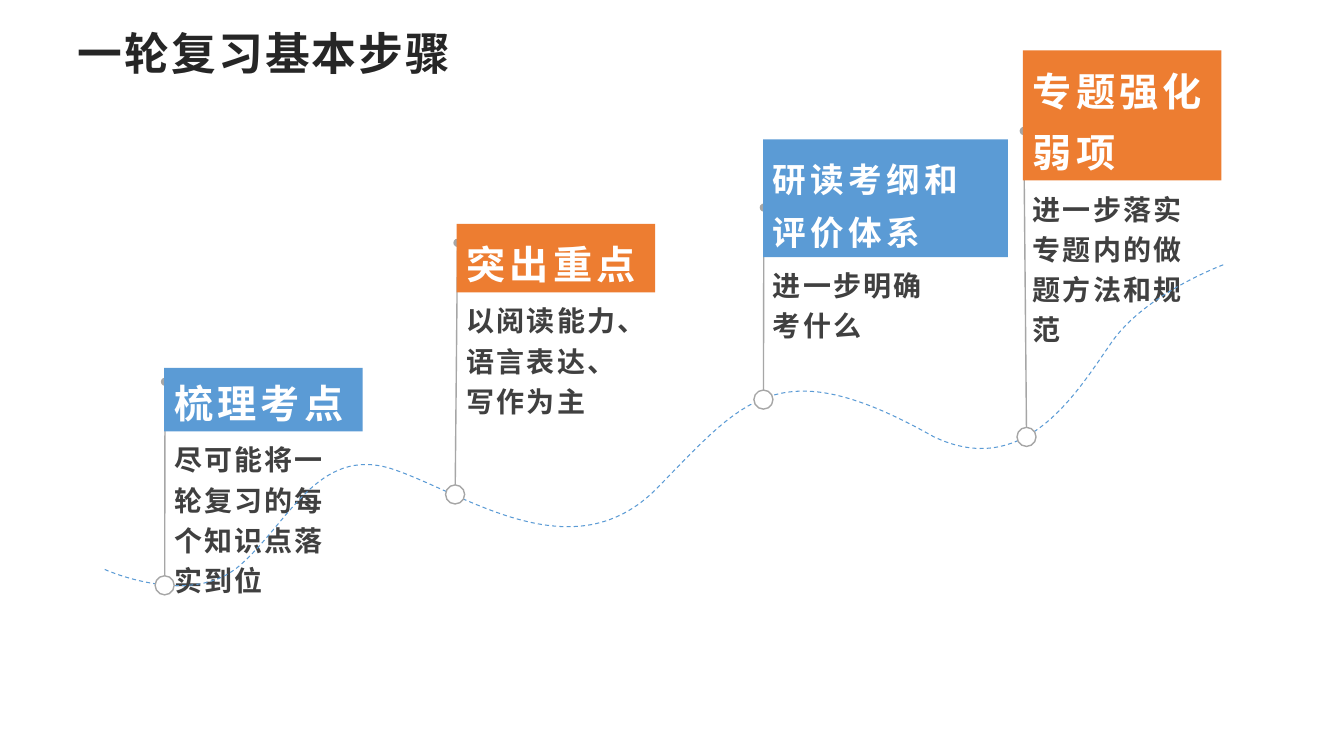
import pptx
import pptx.util
import pptx.dml.color
import pptx.enum.dml
import pptx.enum.shapes
import pptx.enum.text
import pptx.oxml
import pptx.oxml.ns
from pptx.util import Cm, Pt

COLORS = {
    "title": "262626",
    "body": "404040",
    "white": "FFFFFF",
    "blue": "5B9BD5",
    "orange": "ED7D31",
    "gray": "A6A6A6",
}
CJK_FONT = "Noto Sans CJK SC"
NS = 'xmlns:a="http://schemas.openxmlformats.org/drawingml/2006/main"'


def rgb(name):
    return pptx.dml.color.RGBColor.from_string(COLORS[name])


def write(shape, text, font, size, color, spacing, line_spacing, anchor, top=0.13):
    frame = shape.text_frame
    frame.word_wrap = True
    frame.vertical_anchor = anchor
    frame.margin_left = frame.margin_right = Cm(0.25)
    frame.margin_top, frame.margin_bottom = Cm(top), Cm(0.13)
    paragraph = frame.paragraphs[0]
    paragraph.alignment = pptx.enum.text.PP_ALIGN.LEFT
    paragraph.line_spacing = line_spacing
    run = paragraph.add_run()
    run.text = text
    run.font.name = font
    run.font.size = Pt(size)
    run.font.bold = True
    run.font.color.rgb = rgb(color)
    properties = run.font._element
    properties.set("lang", "zh-CN")
    properties.set("spc", str(int(spacing * 100)))
    properties.find(pptx.oxml.ns.qn("a:latin")).addnext(
        pptx.oxml.parse_xml(f'<a:ea {NS} typeface="{CJK_FONT}"/>'))


prs = pptx.Presentation()
prs.slide_width, prs.slide_height = Cm(33.87), Cm(19.05)
slide = prs.slides.add_slide(prs.slide_layouts[6])
shapes = slide.shapes
TOP = pptx.enum.text.MSO_ANCHOR.TOP
BOTTOM = pptx.enum.text.MSO_ANCHOR.BOTTOM

# Title
title = shapes.add_textbox(Cm(1.7), Cm(0.43), Cm(30.48), Cm(1.7))
write(title, "一轮复习基本步骤", "Arial", 32, "title", 1.5, 1.0, BOTTOM)

# Steps: heading, size, colour, left, top, width, height, marker centre, description
steps = [
    ("梳理考点", 28, "blue", 4.14, 9.27, 5.0, 1.6, (4.15, 14.75),
     "尽可能将一轮复习的每个知识点落实到位"),
    ("突出重点", 28, "orange", 11.51, 5.64, 5.0, 1.73, (11.47, 12.46),
     "以阅读能力、语言表达、写作为主"),
    ("研读考纲和评价体系", 24, "blue", 19.23, 3.51, 6.17, 2.97, (19.24, 10.07),
     "进一步明确考什么"),
    ("专题强化弱项", 28, "orange", 25.78, 1.27, 5.0, 3.28, (25.87, 11.01),
     "进一步落实专题内的做题方法和规范"),
]
for heading, size, color, left, top, width, height, marker, description in steps:
    detail_top = top + height + 0.12

    # Flagpole with a round head
    pole = shapes.add_connector(
        pptx.enum.shapes.MSO_CONNECTOR.STRAIGHT,
        Cm(marker[0]), Cm(marker[1]), Cm(left + 0.02), Cm(detail_top - 1.37))
    pole.line.color.rgb = rgb("gray")
    pole.line.width = Pt(1)
    pole.line._get_or_add_ln().append(
        pptx.oxml.parse_xml(f'<a:tailEnd {NS} type="oval"/>'))
    pole._element.spPr.append(pptx.oxml.parse_xml(f"<a:effectLst {NS}/>"))

    detail = shapes.add_textbox(Cm(left), Cm(detail_top), Cm(5), Cm(2.69))
    write(detail, description, "Arial", 20, "body", 1.5, 1.2, TOP, top=0)

    flag = shapes.add_shape(
        pptx.enum.shapes.MSO_SHAPE.RECTANGLE, Cm(left), Cm(top), Cm(width), Cm(height))
    flag.shadow.inherit = False
    flag.fill.solid()
    flag.fill.fore_color.rgb = rgb(color)
    flag.line.fill.background()
    write(flag, heading, CJK_FONT, size, "white", 3, 1.3, BOTTOM)

# Dashed route: a start point, then three points for each Bezier segment
route_points = [
    (2.64, 14.35),
    (2.64, 14.35), (4.78, 15.32), (6.02, 14.27),
    (7.26, 13.21), (8.0, 11.23), (9.86, 11.81),
    (11.68, 12.4), (14.45, 14.5), (16.59, 12.27),
    (18.75, 10.06), (19.63, 8.81), (23.52, 11.0),
    (25.78, 12.09), (27.08, 9.98), (27.97, 8.69),
    (28.83, 7.39), (30.89, 6.65), (30.89, 6.65),
]
points = [(Cm(x), Cm(y)) for x, y in route_points]
builder = shapes.build_freeform(*points[0], scale=1.0)
builder.add_line_segments(points[1:], close=False)
route = builder.convert_to_shape()
outline = route._element.find(".//" + pptx.oxml.ns.qn("a:path"))
segments = outline.findall(pptx.oxml.ns.qn("a:lnTo"))
for first in range(0, len(segments), 3):
    curve = pptx.oxml.parse_xml(f"<a:cubicBezTo {NS}/>")
    outline.append(curve)
    for segment in segments[first:first + 3]:
        curve.append(segment[0])
        outline.remove(segment)
# The frame fits the curve rather than its control points
route.height = Cm(8.1)
outline.set("h", str(Cm(8.1)))
route.shadow.inherit = False
route.fill.background()
route.line.color.rgb = rgb("blue")
route.line.width = Pt(0.75)
route.line.dash_style = pptx.enum.dml.MSO_LINE.DASH

# Markers on the route
diameter = 0.48
for step in steps:
    x, y = step[7]
    marker = shapes.add_shape(
        pptx.enum.shapes.MSO_SHAPE.OVAL, Cm(x - diameter / 2), Cm(y - diameter / 2),
        Cm(diameter), Cm(diameter))
    marker.shadow.inherit = False
    marker.fill.solid()
    marker.fill.fore_color.rgb = rgb("white")
    marker.line.color.rgb = rgb("gray")
    marker.line.width = Pt(1)

prs.save("out.pptx")
